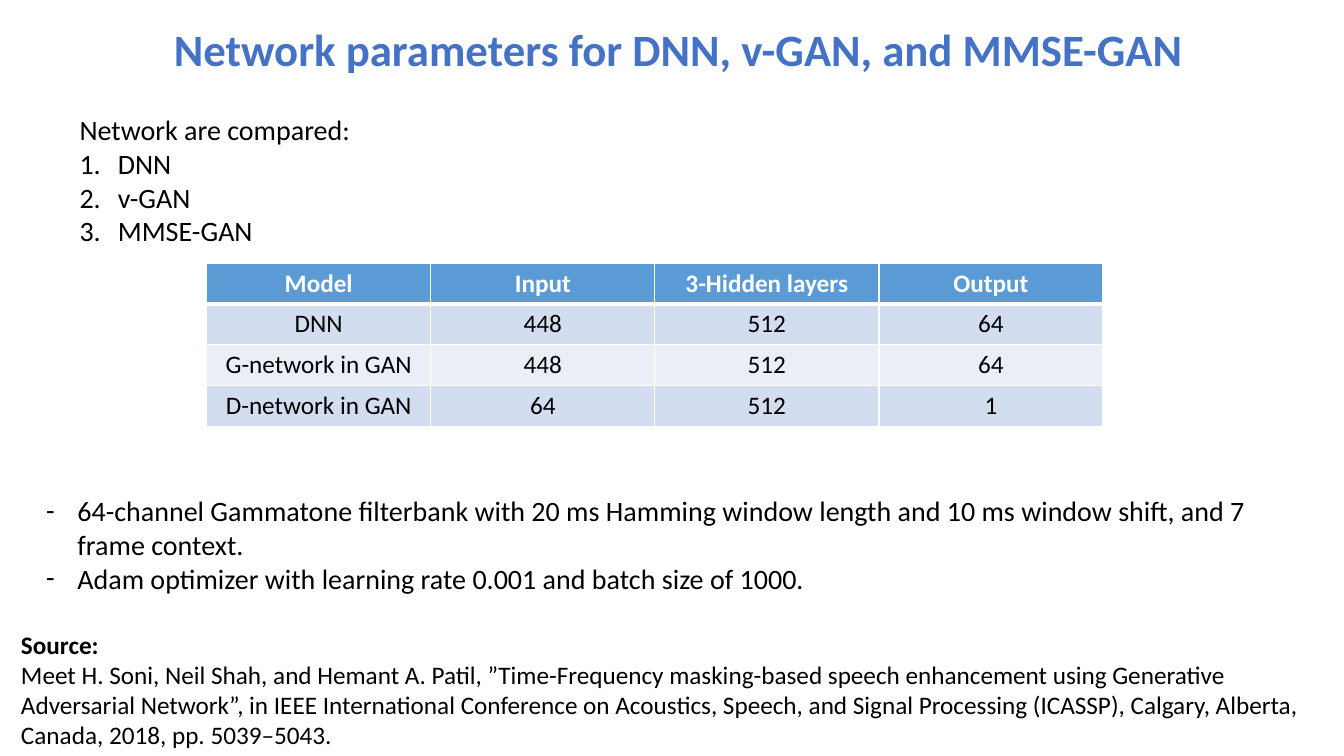
"""Builds the slide that compares the network parameters of three models."""
from dataclasses import dataclass

from lxml import etree
from pptx import Presentation
from pptx.dml.color import RGBColor
from pptx.enum import text
from pptx.oxml import ns
from pptx.util import Inches, Pt


@dataclass(frozen=True)
class Theme:
    font: str = "Calibri"
    title: str = "4472C4"
    ink: str = "000000"
    white: str = "FFFFFF"
    header: str = "5B9BD5"
    bands: tuple = ("D2DEEF", "EAEFF7")
    title_size: int = 32
    body_size: int = 20
    small_size: int = 18


NUMBER = ("a:buAutoNum", {"type": "arabicPeriod"}, 0.38)
DASH = ("a:buChar", {"char": "-"}, 0.31)


class SlideBuilder:
    def __init__(self, deck, theme):
        self.theme = theme
        self.page = deck.slides.add_slide(deck.slide_layouts[5])

    def apply(self, target, values):
        for name, value in values.items():
            setattr(target, name, value)

    def add_span(self, para, words, size, color=None, bold=False):
        span = para.add_run()
        span.text = words
        self.apply(span.font, {"name": self.theme.font, "size": Pt(size), "bold": bold})
        span.font.color.rgb = RGBColor.from_string(color or self.theme.ink)

    def place(self, shape, left, top, width, height):
        bounds = {"left": left, "top": top, "width": width, "height": height}
        self.apply(shape, {name: Inches(value) for name, value in bounds.items()})

    def title(self, words, *bounds):
        shape = self.page.shapes.title
        self.place(shape, *bounds)
        self.apply(shape.text_frame, {
            "word_wrap": True,
            "auto_size": text.MSO_AUTO_SIZE.NONE,
            "vertical_anchor": text.MSO_ANCHOR.MIDDLE,
        })
        para = shape.text_frame.paragraphs[0]
        self.apply(para, {"alignment": text.PP_ALIGN.CENTER, "line_spacing": 0.9})
        self.add_span(para, words, self.theme.title_size, self.theme.title, True)

    def bullet(self, para, style):
        tag, attributes, indent = style
        properties = para._p.get_or_add_pPr()
        properties.set("marL", str(Inches(indent)))
        properties.set("indent", str(-Inches(indent)))
        etree.SubElement(properties, ns.qn("a:buFont"), typeface=self.theme.font)
        etree.SubElement(properties, ns.qn(tag), attributes)

    def text_box(self, lines, size, *bounds):
        box = self.page.shapes.add_textbox(*map(Inches, bounds))
        frame = box.text_frame
        self.apply(frame, {
            "word_wrap": True, "auto_size": text.MSO_AUTO_SIZE.SHAPE_TO_FIT_TEXT,
        })
        for index, (words, style, bold) in enumerate(lines):
            para = frame.add_paragraph() if index else frame.paragraphs[0]
            if style:
                self.bullet(para, style)
            self.add_span(para, words, size, bold=bold)

    def borders(self, cell, widths):
        properties = cell._tc.get_or_add_tcPr()
        for side, width in widths.items():
            line = etree.SubElement(properties, ns.qn(f"a:ln{side}"), w=str(Pt(width)))
            fill = etree.SubElement(line, ns.qn("a:solidFill"))
            etree.SubElement(fill, ns.qn("a:srgbClr"), val=self.theme.white)

    def table(self, rows, *bounds):
        theme = self.theme
        size = len(rows), len(rows[0])
        table = self.page.shapes.add_table(*size, *map(Inches, bounds)).table
        for row, values in enumerate(rows):
            head = row == 0
            fill = theme.header if head else theme.bands[(row - 1) % 2]
            widths = {"L": 1, "R": 1, "T": 3 if row == 1 else 1, "B": 3 if head else 1}
            for column, value in enumerate(values):
                cell = table.cell(row, column)
                self.borders(cell, widths)
                cell.fill.solid()
                cell.fill.fore_color.rgb = RGBColor.from_string(fill)
                para = cell.text_frame.paragraphs[0]
                para.alignment = text.PP_ALIGN.CENTER
                color = theme.white if head else theme.ink
                self.add_span(para, value, theme.small_size, color, head)


def main():
    deck = Presentation()
    deck.slide_width, deck.slide_height = Inches(13.33), Inches(7.5)
    theme = Theme()
    builder = SlideBuilder(deck, theme)
    builder.title("Network parameters for DNN, v-GAN, and MMSE-GAN", 0.98, 0.05, 11.5, 0.94)
    builder.table([
        ("Model", "Input", "3-Hidden layers", "Output"),
        ("DNN", "448", "512", "64"),
        ("G-network in GAN", "448", "512", "64"),
        ("D-network in GAN", "64", "512", "1"),
    ], 2.05, 2.61, 8.89, 1.62)
    networks = [(name, NUMBER, False) for name in ("DNN", "v-GAN", "MMSE-GAN")]
    builder.text_box([("Network are compared:", None, False), *networks],
                     theme.body_size, 0.69, 1.07, 12.42, 1.45)
    builder.text_box([
        ("64-channel Gammatone filterbank with 20 ms Hamming window length "
         "and 10 ms window shift, and 7 frame context.", DASH, False),
        ("Adam optimizer with learning rate 0.001 and batch size of 1000.", DASH, False),
    ], theme.body_size, 0.36, 4.85, 12.27, 1.11)
    builder.text_box([
        ("Source:", None, True),
        ("Meet H. Soni, Neil Shah, and Hemant A. Patil, ”Time-Frequency masking-based "
         "speech enhancement using Generative Adversarial Network”, in IEEE International "
         "Conference on Acoustics, Speech, and Signal Processing (ICASSP), Calgary, "
         "Alberta, Canada, 2018, pp. 5039–5043.", None, False),
    ], theme.small_size, 0.11, 6.19, 13.12, 1.31)
    deck.save("out.pptx")


if __name__ == "__main__":
    main()
